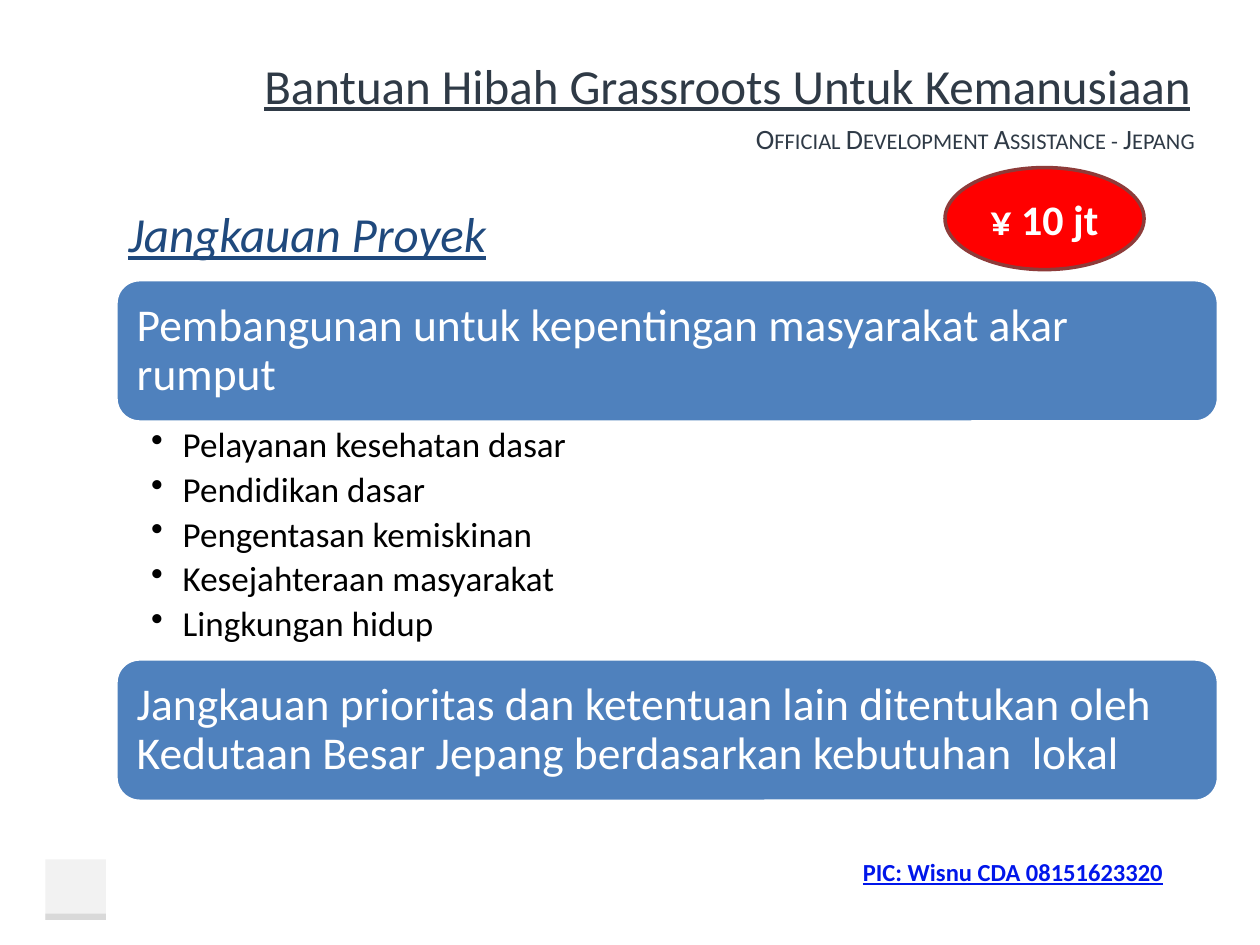
from lxml import etree
from pptx import Presentation
from pptx.dml.color import RGBColor
from pptx.enum.shapes import MSO_SHAPE
from pptx.enum.text import MSO_ANCHOR, PP_ALIGN
from pptx.oxml.ns import qn
from pptx.util import Inches, Pt

RECTANGLE = MSO_SHAPE.RECTANGLE
ROUNDED = MSO_SHAPE.ROUNDED_RECTANGLE
OVAL = MSO_SHAPE.OVAL
LEFT, CENTER, RIGHT = PP_ALIGN.LEFT, PP_ALIGN.CENTER, PP_ALIGN.RIGHT
TOP, MIDDLE = MSO_ANCHOR.TOP, MSO_ANCHOR.MIDDLE

WHITE = RGBColor(0xFF, 0xFF, 0xFF)
BLACK = RGBColor(0x00, 0x00, 0x00)
SLATE = RGBColor(0x2F, 0x3A, 0x46)
NAVY = RGBColor(0x1F, 0x49, 0x7D)
BLUE = RGBColor(0x4F, 0x81, 0xBD)
LINK_BLUE = RGBColor(0x00, 0x16, 0xEA)
RED = RGBColor(0xFF, 0x00, 0x00)
DARK_RED = RGBColor(0x8E, 0x3B, 0x39)
LIGHT_GRAY = RGBColor(0xF2, 0xF2, 0xF2)
GRAY = RGBColor(0xD9, 0xD9, 0xD9)


def add_shape(kind, box, fill, line=None):
    shape = slide.shapes.add_shape(kind, *map(Inches, box))
    shape.shadow.inherit = False
    shape.fill.solid()
    shape.fill.fore_color.rgb = fill
    if line is None:
        shape.line.fill.background()
    else:
        shape.line.color.rgb = line
        shape.line.width = Pt(2)
    return shape


def style(paragraph, text, size, color, align=LEFT, bold=False, italic=False, underline=False):
    paragraph.text = text
    paragraph.alignment = align
    font = paragraph.font
    font.name = "Calibri"
    font.size = Pt(size)
    font.color.rgb = color
    font.bold, font.italic, font.underline = bold, italic, underline


presentation = Presentation()
presentation.slide_width = Inches(10)
presentation.slide_height = Inches(7.5)
slide = presentation.slides.add_slide(presentation.slide_layouts[6])

# Page marker in the lower left corner
add_shape(RECTANGLE, (0.36, 6.82, 0.48, 0.48), LIGHT_GRAY)
add_shape(RECTANGLE, (0.36, 7.25, 0.48, 0.05), GRAY)

# Headings and contact line
labels = [
    ((3.27, 0.94, 6.31, 0.31), MIDDLE, "Official Development Assistance - Jepang", 16, SLATE,
     {"align": RIGHT}),
    ((2, 0.33, 7.67, 0.68), MIDDLE, "Bantuan Hibah Grassroots Untuk Kemanusiaan", 28, SLATE,
     {"underline": True}),
    ((0.92, 1.57, 4.92, 0.57), TOP, "Jangkauan Proyek", 28, NAVY,
     {"italic": True, "underline": True}),
    ((6.75, 6.75, 2.92, 0.34), TOP, "PIC: Wisnu CDA 08151623320", 14, LINK_BLUE,
     {"bold": True, "underline": True}),
]
for box, anchor, text, size, color, options in labels:
    frame = slide.shapes.add_textbox(*map(Inches, box)).text_frame
    frame.word_wrap = True
    frame.vertical_anchor = anchor
    paragraph = frame.paragraphs[0]
    style(paragraph, text, size, color, **options)
    if size == 16:
        paragraph.runs[0]._r.get_or_add_rPr().set("cap", "small")

# Blue banners
banners = [
    (2.22, "Pembangunan untuk kepentingan masyarakat akar rumput"),
    (5.23, "Jangkauan prioritas dan ketentuan lain ditentukan oleh "
           "Kedutaan Besar Jepang berdasarkan kebutuhan  lokal"),
]
for top, text in banners:
    frame = add_shape(ROUNDED, (0.92, top, 8.75, 1.13), BLUE, WHITE).text_frame
    frame.margin_left = frame.margin_right = Inches(0.11)
    frame.margin_top = frame.margin_bottom = Inches(0.11)
    frame.vertical_anchor = MIDDLE
    style(frame.paragraphs[0], text, 26, WHITE)
    frame.paragraphs[0].line_spacing = 0.9

# Project areas
areas = ["Pelayanan kesehatan dasar", "Pendidikan dasar", "Pengentasan kemiskinan",
         "Kesejahteraan masyarakat", "Lingkungan hidup"]
box = (0.92, 3.35, 8.75, 1.88)
frame = slide.shapes.add_textbox(*map(Inches, box)).text_frame
frame.word_wrap = True
frame.margin_left, frame.margin_right = Inches(0.28), Inches(0.2)
frame.margin_top = frame.margin_bottom = Inches(0.04)
for index, area in enumerate(areas):
    paragraph = frame.add_paragraph() if index else frame.paragraphs[0]
    paragraph.line_spacing = 0.9
    paragraph.space_after = Pt(4)
    properties = paragraph._p.get_or_add_pPr()
    properties.set("marL", str(Inches(0.25)))
    properties.set("indent", str(-Inches(0.25)))
    etree.SubElement(properties, qn("a:buChar")).set("char", "•")
    style(paragraph, area, 20, BLACK)

# Grant amount
frame = add_shape(OVAL, (7.5, 1.33, 1.58, 0.81), RED, DARK_RED).text_frame
frame.word_wrap = False
frame.vertical_anchor = MIDDLE
style(frame.paragraphs[0], "¥ 10 jt", 24, WHITE, align=CENTER, bold=True)

presentation.save("out.pptx")
